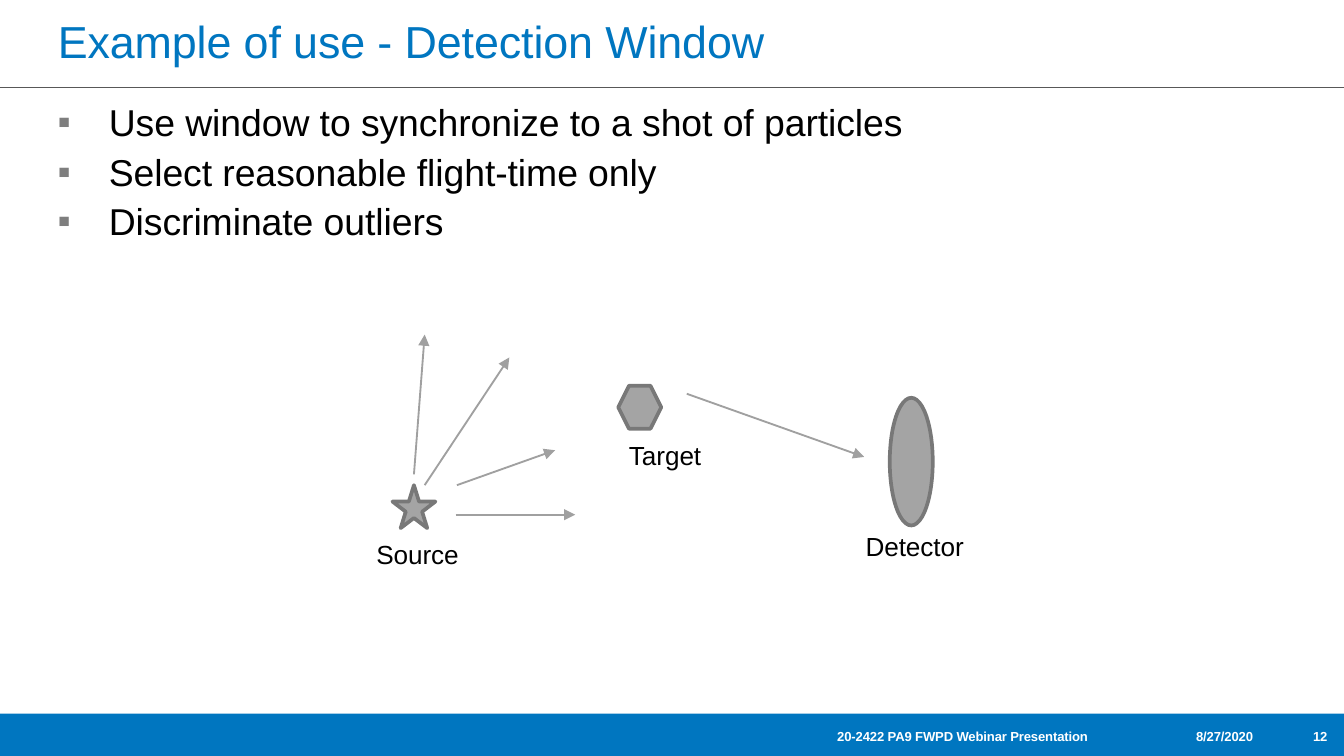
from lxml.etree import SubElement
from pptx import Presentation
from pptx.dml.color import RGBColor
from pptx.enum.shapes import MSO_CONNECTOR, MSO_SHAPE
from pptx.enum.text import MSO_ANCHOR, PP_ALIGN
from pptx.oxml.ns import qn
from pptx.util import Inches, Pt

SLIDE_WIDTH = 10
SLIDE_HEIGHT = SLIDE_WIDTH * 9 / 16
FOOTER_TOP = 5.31

BLUE, WHITE, BLACK = "0076C0", "FFFFFF", "000000"
RULE, BULLET = "585858", "7E7E7E"
ARROW, PART_FILL, PART_LINE = "A0A0A0", "A4A4A4", "787878"


def color(hex_code):
    return RGBColor.from_string(hex_code)


def style_font(paragraph, size, hex_code, bold=False):
    font = paragraph.font
    font.name, font.size, font.bold = "Arial", Pt(size), bold
    font.color.rgb = color(hex_code)


def tighten(paragraph):
    for run in paragraph.runs:
        run._r.get_or_add_rPr().set("spc", "-5")


def clear_frame(frame, wrap=False):
    frame.word_wrap = wrap
    frame.vertical_anchor = MSO_ANCHOR.TOP
    frame.margin_left = frame.margin_top = 0
    frame.margin_right = frame.margin_bottom = 0


def add_label(slide, box, wording, size, hex_code=BLACK, bold=False):
    frame = slide.shapes.add_textbox(*map(Inches, box)).text_frame
    clear_frame(frame)
    label = frame.paragraphs[0]
    label.text = wording
    style_font(label, size, hex_code, bold)
    tighten(label)


def add_line(slide, start, end, hex_code, width, arrow=False):
    points = map(Inches, (*start, *end))
    connector = slide.shapes.add_connector(MSO_CONNECTOR.STRAIGHT, *points)
    connector.line.color.rgb = color(hex_code)
    connector.line.width = Pt(width)
    if arrow:
        SubElement(connector.line._get_or_add_ln(), qn("a:tailEnd"), type="triangle")
    SubElement(connector._element.spPr, qn("a:effectLst"))


def add_solid(slide, preset, box, fill, outline=None):
    solid = slide.shapes.add_shape(preset, *map(Inches, box))
    solid.shadow.inherit = False
    solid.fill.solid()
    solid.fill.fore_color.rgb = color(fill)
    if outline:
        solid.line.color.rgb = color(outline)
        solid.line.width = Pt(1.98)
    else:
        solid.line.fill.background()


def add_header(slide, left, top, width, height):
    title = slide.shapes.title
    title.left, title.top = Inches(left + 0.43), Inches(top + 0.1)
    title.width, title.height = Inches(5.4), Inches(0.43)
    clear_frame(title.text_frame)
    heading = title.text_frame.paragraphs[0]
    heading.text = "Example of use - Detection Window"
    heading.alignment = PP_ALIGN.LEFT
    style_font(heading, 24, BLUE)
    tighten(heading)
    bottom = top + height
    add_line(slide, (left, bottom), (left + width, bottom), RULE, 0.78)


def add_bullets(slide, box, points):
    frame = slide.shapes.add_textbox(*map(Inches, box)).text_frame
    clear_frame(frame, wrap=True)
    for index, wording in enumerate(points):
        point = frame.paragraphs[0] if index == 0 else frame.add_paragraph()
        point.text = wording
        properties = point._p.get_or_add_pPr()
        properties.set("marL", str(Inches(0.38)))
        properties.set("indent", str(-Inches(0.38)))
        bullet_color = SubElement(properties, qn("a:buClr"))
        SubElement(bullet_color, qn("a:srgbClr"), val=BULLET)
        SubElement(properties, qn("a:buFont"), typeface="Arial")
        SubElement(properties, qn("a:buChar"), char="▪")
        if index:
            point.space_before = Pt(2.4)
        style_font(point, 20, BLACK)
        tighten(point)


def add_diagram(slide, left, top):
    def at(x, y):
        return left + x, top + y

    flights = [
        ((0.29, 1.04), (0.37, 0)),
        ((0.37, 1.12), (1, 0.17)),
        ((0.61, 1.12), (1.34, 0.86)),
        ((0.6, 1.34), (1.49, 1.34)),
        ((2.32, 0.44), (3.64, 0.91)),
    ]
    for start, end in flights:
        add_line(slide, at(*start), at(*end), ARROW, 1, arrow=True)

    parts = [
        ("Source", MSO_SHAPE.STAR_5_POINT, (0.13, 1.12), 0.32, (0.01, 1.52), 0.64),
        ("Target", MSO_SHAPE.HEXAGON, (1.81, 0.38), 0.32, (1.89, 0.78), 0.59),
        ("Detector", MSO_SHAPE.OVAL, (3.83, 0.47), 0.95, (3.65, 1.46), 0.76),
    ]
    for name, preset, corner, height, label_corner, label_width in parts:
        add_solid(slide, preset, (*at(*corner), 0.32, height), PART_FILL, PART_LINE)
        add_label(slide, (*at(*label_corner), label_width, 0.26), name, 14)


def add_footer(slide, left, top, width, height):
    add_solid(slide, MSO_SHAPE.RECTANGLE, (left, top, width, height), BLUE)
    entries = [
        (6.23, 1.94, "20-2422 PA9 FWPD Webinar Presentation"),
        (8.9, 0.46, "8/27/2020"),
        (9.77, 0.15, "12"),
    ]
    for x, entry_width, wording in entries:
        box = (left + x, top + 0.11, entry_width, 0.14)
        add_label(slide, box, wording, 7, WHITE, bold=True)


def main():
    deck = Presentation()
    deck.slide_width, deck.slide_height = Inches(SLIDE_WIDTH), Inches(SLIDE_HEIGHT)
    slide = deck.slides.add_slide(deck.slide_layouts[5])
    add_footer(slide, 0, FOOTER_TOP, SLIDE_WIDTH, SLIDE_HEIGHT - FOOTER_TOP)
    add_header(slide, 0, 0, SLIDE_WIDTH, 0.65)
    add_bullets(slide, (0.43, 0.74, 6.33, 1.08), [
        "Use window to synchronize to a shot of particles",
        "Select reasonable flight-time only",
        "Discriminate outliers",
    ])
    add_diagram(slide, 2.79, 2.49)
    deck.save("out.pptx")


if __name__ == "__main__":
    main()
